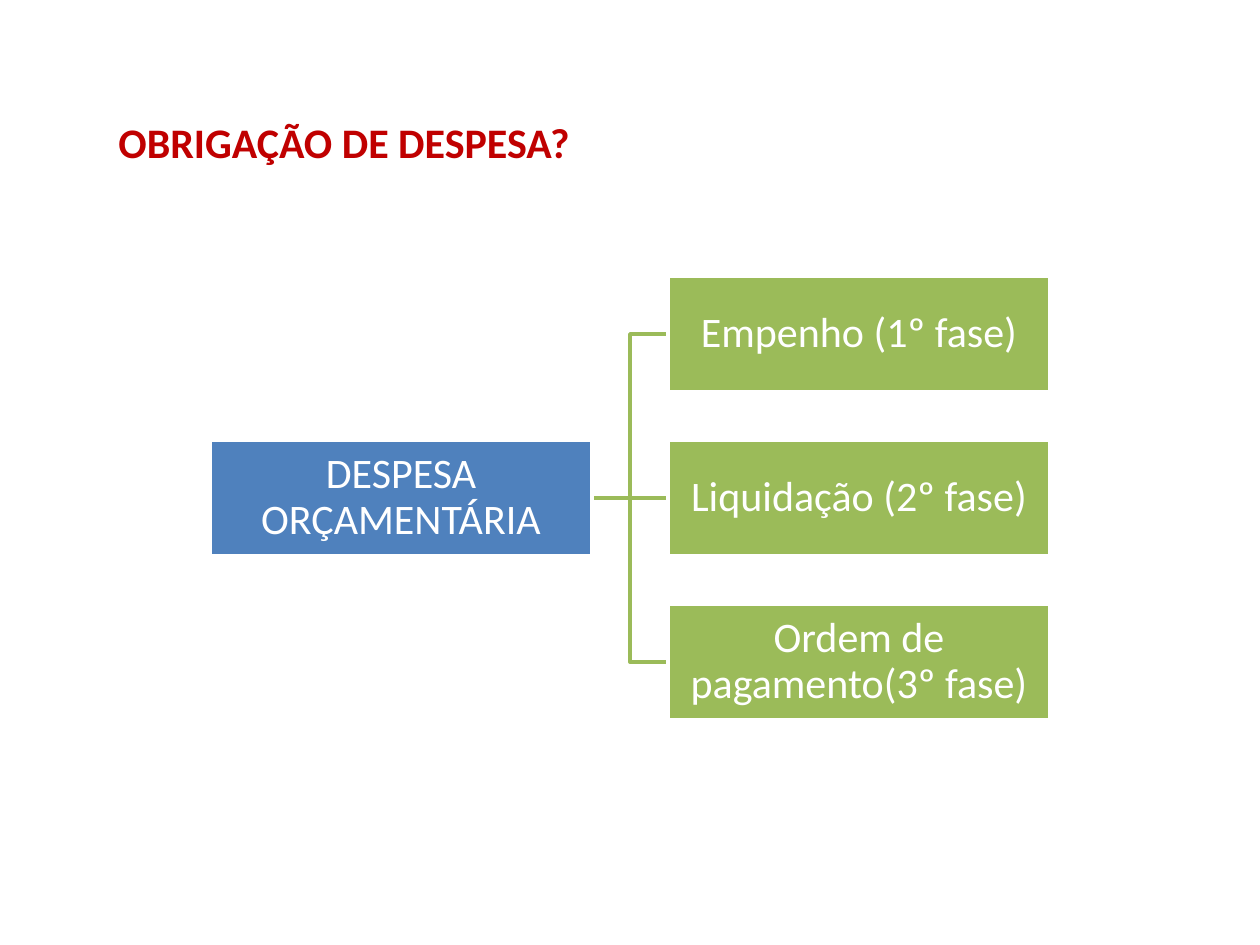
from lxml import etree
from pptx import Presentation
from pptx import util as u
from pptx.dml.color import RGBColor
from pptx.enum import shapes, text
from pptx.oxml.ns import qn

TITLE = "OBRIGAÇÃO DE DESPESA?"
ROOT = "DESPESA ORÇAMENTÁRIA"
PHASES = ["Empenho (1º fase)", "Liquidação (2º fase)", "Ordem de pagamento(3º fase)"]

BLUE, GREEN, RED, WHITE = "4F81BD", "9BBB59", "C00000", "FFFFFF"
BOX_WIDTH, BOX_HEIGHT = 382, 116
ROOT_LEFT, PHASE_LEFT = 210, 668
FIRST_TOP, PITCH = 276, 164
INSET = 2


def px(value):
    return u.Emu(value * 914400 // 126)


def color(value):
    return RGBColor.from_string(value)


def write(frame, words, hue, bold=False):
    para = frame.paragraphs[0]
    span = para.add_run()
    span.text = words
    for name, value in {"name": "Calibri", "size": u.Pt(24), "bold": bold}.items():
        setattr(span.font, name, value)
    span.font.color.rgb = color(hue)
    return para


def outline(shape, hue):
    shape.line.color.rgb = color(hue)
    shape.line.width = u.Pt(2)


def add_box(page, words, left, top, fill):
    box = page.shapes.add_shape(shapes.MSO_SHAPE.RECTANGLE, px(left), px(top),
                                px(BOX_WIDTH), px(BOX_HEIGHT))
    box.shadow.inherit = False
    box.fill.solid()
    box.fill.fore_color.rgb = color(fill)
    outline(box, WHITE)
    frame = box.text_frame
    for side in ("left", "right", "top", "bottom"):
        setattr(frame, f"margin_{side}", px(INSET))
    frame.word_wrap = True
    frame.vertical_anchor = text.MSO_ANCHOR.MIDDLE
    para = write(frame, words, WHITE)
    para.alignment = text.PP_ALIGN.CENTER
    para.line_spacing = 0.9
    return box


def link(page, root, phase):
    """Join root to phase with a line that lies behind the boxes."""
    level = root.top == phase.top
    kind = shapes.MSO_CONNECTOR.STRAIGHT if level else shapes.MSO_CONNECTOR.ELBOW
    line = page.shapes.add_connector(kind, 0, 0, 0, 0)
    line.begin_connect(root, 3)
    line.end_connect(phase, 1)
    outline(line, GREEN)
    etree.SubElement(line.element.spPr, qn("a:effectLst"))
    root.element.addprevious(line.element)


def main():
    deck = Presentation()
    deck.slide_width, deck.slide_height = px(1260), px(945)
    page = deck.slides.add_slide(deck.slide_layouts[6])

    root_top = FIRST_TOP + PITCH * (len(PHASES) // 2)
    root = add_box(page, ROOT, ROOT_LEFT, root_top, BLUE)
    for row, words in enumerate(PHASES):
        phase = add_box(page, words, PHASE_LEFT, FIRST_TOP + row * PITCH, GREEN)
        link(page, root, phase)

    title = page.shapes.add_textbox(px(106), px(110), px(515), px(63))
    title.text_frame.word_wrap = True
    write(title.text_frame, TITLE, RED, bold=True)
    deck.save("out.pptx")


if __name__ == "__main__":
    main()
